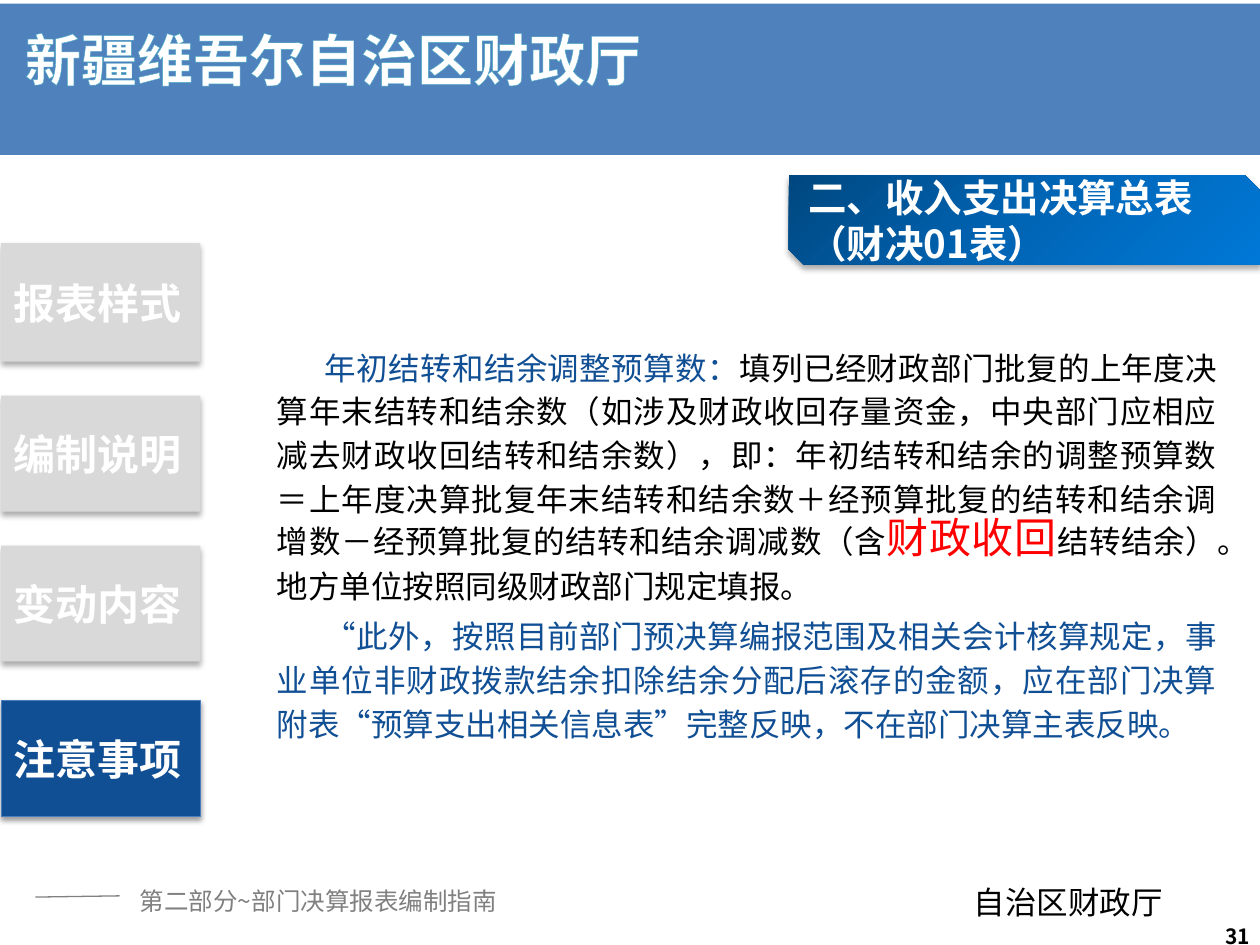
import pptx
import pptx.dml.color
import pptx.enum.shapes
import pptx.enum.text
import pptx.oxml
import pptx.oxml.ns
import pptx.util
from lxml import etree

Inches = pptx.util.Inches
Pt = pptx.util.Pt
RGB = pptx.dml.color.RGBColor.from_string
SHAPE = pptx.enum.shapes.MSO_SHAPE
ALIGN = pptx.enum.text.PP_ALIGN
ANCHOR = pptx.enum.text.MSO_ANCHOR
qn = pptx.oxml.ns.qn
NAMESPACE = pptx.oxml.ns.nsdecls("a")
FONT = "Noto Sans CJK SC"
COLORS = {
    "banner": "4F81BD", "outline": "4BACC6", "white": "FFFFFF", "black": "000000",
    "navy": "114F95", "navy_edge": "4B7EBC", "tab": "D9D9D9", "gray": "808080",
    "red": "FF0000", "deep": "00477F", "middle": "0065B5", "bright": "0078D7",
}


def add_run(paragraph, text, color, latin=FONT, **font_format):
    run = paragraph.add_run()
    run.text = text
    run.font.name = latin
    run.font.color.rgb = RGB(COLORS[color])
    for name, value in font_format.items():
        setattr(run.font, name, value)
    east_asian = etree.SubElement(run.font._element, qn("a:ea"))
    east_asian.set("typeface", FONT)
    return run


def add_box(position, kind=None, fill=None, shadow=None, **frame_format):
    """Add a text box, or a preset shape; shadow is (opacity %, blur pt, distance pt)."""
    lengths = [Inches(value) for value in position]
    if kind is None:
        shape = slide.shapes.add_textbox(*lengths)
    else:
        shape = slide.shapes.add_shape(kind, *lengths)
        shape.shadow.inherit = False
        shape.line.fill.background()
        if fill:
            shape.fill.solid()
            shape.fill.fore_color.rgb = RGB(COLORS[fill])
    if shadow:
        opacity, blur, distance = shadow
        effects = shape._element.spPr.find(qn("a:effectLst"))
        effects.append(pptx.oxml.parse_xml(
            f'<a:outerShdw {NAMESPACE} blurRad="{Pt(blur)}" dist="{Pt(distance)}" '
            f'dir="5400000" rotWithShape="0"><a:srgbClr val="{COLORS["black"]}">'
            f'<a:alpha val="{opacity * 1000}"/></a:srgbClr></a:outerShdw>'))
    shape.text_frame.word_wrap = True
    for name, value in frame_format.items():
        setattr(shape.text_frame, name, value)
    shape.text_frame.paragraphs[0].alignment = ALIGN.LEFT
    return shape


presentation = pptx.Presentation()
presentation.slide_width = Inches(10)
presentation.slide_height = Inches(7.5)
slide = presentation.slides.add_slide(presentation.slide_layouts[6])

# Banner and department name
for position in [(0, 0.23, 10, 1), (0, 0.03, 10, 0.87)]:
    add_box(position, SHAPE.RECTANGLE, "banner")
banner_title = add_box((0.1, 0.15, 5.66, 0.64))
title_run = add_run(banner_title.text_frame.paragraphs[0], "新疆维吾尔自治区财政厅",
                    "white", size=Pt(32), bold=True)
title_run.font._element.insert(0, pptx.oxml.parse_xml(
    f'<a:ln {NAMESPACE} w="{Pt(0.8)}"><a:solidFill>'
    f'<a:srgbClr val="{COLORS["outline"]}"/></a:solidFill></a:ln>'))

# Section heading
TAB_SHADOW = (32, 3.5, 2.2)
heading = add_box((6.26, 1.39, 3.74, 0.71), SHAPE.SNIP_2_DIAG_RECTANGLE,
                  shadow=TAB_SHADOW, vertical_anchor=ANCHOR.MIDDLE)
heading.fill.gradient()
gradient = heading._element.spPr.find(qn("a:gradFill"))
stops = gradient.find(qn("a:gsLst"))
for stop in list(stops):
    stops.remove(stop)
for percent, color in [(0, "deep"), (50, "middle"), (100, "bright")]:
    stops.append(pptx.oxml.parse_xml(
        f'<a:gs {NAMESPACE} pos="{percent * 1000}">'
        f'<a:srgbClr val="{COLORS[color]}"/></a:gs>'))
gradient.find(qn("a:lin")).set("ang", str(45 * 60000))
add_run(heading.text_frame.paragraphs[0], "二、收入支出决算总表（财决01表）",
        "white", size=Pt(22), bold=True)

# Body text
body = add_box((1.72, 2.27, 8.04, 4.24), margin_top=Inches(0.45))
body_paragraphs = [
    [("年初结转和结余调整预算数：", "navy", FONT, 18),
     ("填列已经财政部门批复的上年度决算年末结转和结余数（如涉及财政收回存量资金，"
      "中央部门应相应减去财政收回结转和结余数），即：年初结转和结余的调整预算数"
      "＝上年度决算批复年末结转和结余数＋经预算批复的结转和结余调增数"
      "－经预算批复的结转和结余调减数（含", "black", "Calibri", 18),
     ("财政收回", "red", "Calibri", 24),
     ("结转结余）。地方单位按照同级财政部门规定填报。", "black", "Calibri", 18)],
    [("“此外，按照目前部门预决算编报范围及相关会计核算规定，"
      "事业单位非财政拨款结余扣除结余分配后滚存的金额，"
      "应在部门决算附表“预算支出相关信息表”完整反映，不在部门决算主表反映。",
      "navy", FONT, 18)],
]
paragraph_format = {"alignment": ALIGN.JUSTIFY, "line_spacing": Pt(25),
                    "space_before": Pt(3.6)}
for index, runs in enumerate(body_paragraphs):
    paragraph = body.text_frame.add_paragraph() if index else body.text_frame.paragraphs[0]
    for name, value in paragraph_format.items():
        setattr(paragraph, name, value)
    properties = paragraph._p.get_or_add_pPr()
    for name in ("marL", "indent"):
        properties.set(name, str(Inches(0.38)))
    for text, color, latin, size in runs:
        add_run(paragraph, text, color, latin, size=Pt(size))

# Side tabs, the last one active
tabs = [("报表样式", 1.93, 0.94), ("编制说明", 3.14, 0.92),
        ("变动内容", 4.33, 0.92), ("注意事项", 5.56, 0.92)]
for label, top, height in tabs:
    active = label == "注意事项"
    tab = add_box((0.01, top, 1.58, height), SHAPE.RECTANGLE,
                  "navy" if active else "tab",
                  (38, 3.1, 1.6) if active else TAB_SHADOW,
                  vertical_anchor=ANCHOR.MIDDLE)
    if active:
        tab.line.color.rgb = RGB(COLORS["navy_edge"])
        tab.line.width = Pt(0.75)
    add_run(tab.text_frame.paragraphs[0], label, "white", size=Pt(24), bold=True)

# Footer
rule = slide.shapes.add_connector(pptx.enum.shapes.MSO_CONNECTOR.STRAIGHT,
                                  Inches(0.28), Inches(7.12), Inches(0.95), Inches(7.11))
rule.line.color.rgb = RGB(COLORS["gray"])
rule.line.width = Pt(0.75)
etree.SubElement(rule._element.spPr, qn("a:effectLst"))

chapter = add_box((1.01, 6.98, 3.08, 0.34))
chapter.text_frame.paragraphs[0].space_before = Pt(2.8)
add_run(chapter.text_frame.paragraphs[0], "第二部分~部门决算报表编制指南", "gray", size=Pt(14))

department = add_box((7.63, 6.96, 1.7, 0.4), word_wrap=False)
add_run(department.text_frame.paragraphs[0], "自治区财政厅", "black", size=Pt(18))

page_number = add_box((7.69, 7.23, 2.33, 0.4), vertical_anchor=ANCHOR.MIDDLE)
page_number.text_frame.paragraphs[0].alignment = ALIGN.RIGHT
add_run(page_number.text_frame.paragraphs[0], "31", "black", size=Pt(12), bold=True)

presentation.save("out.pptx")
